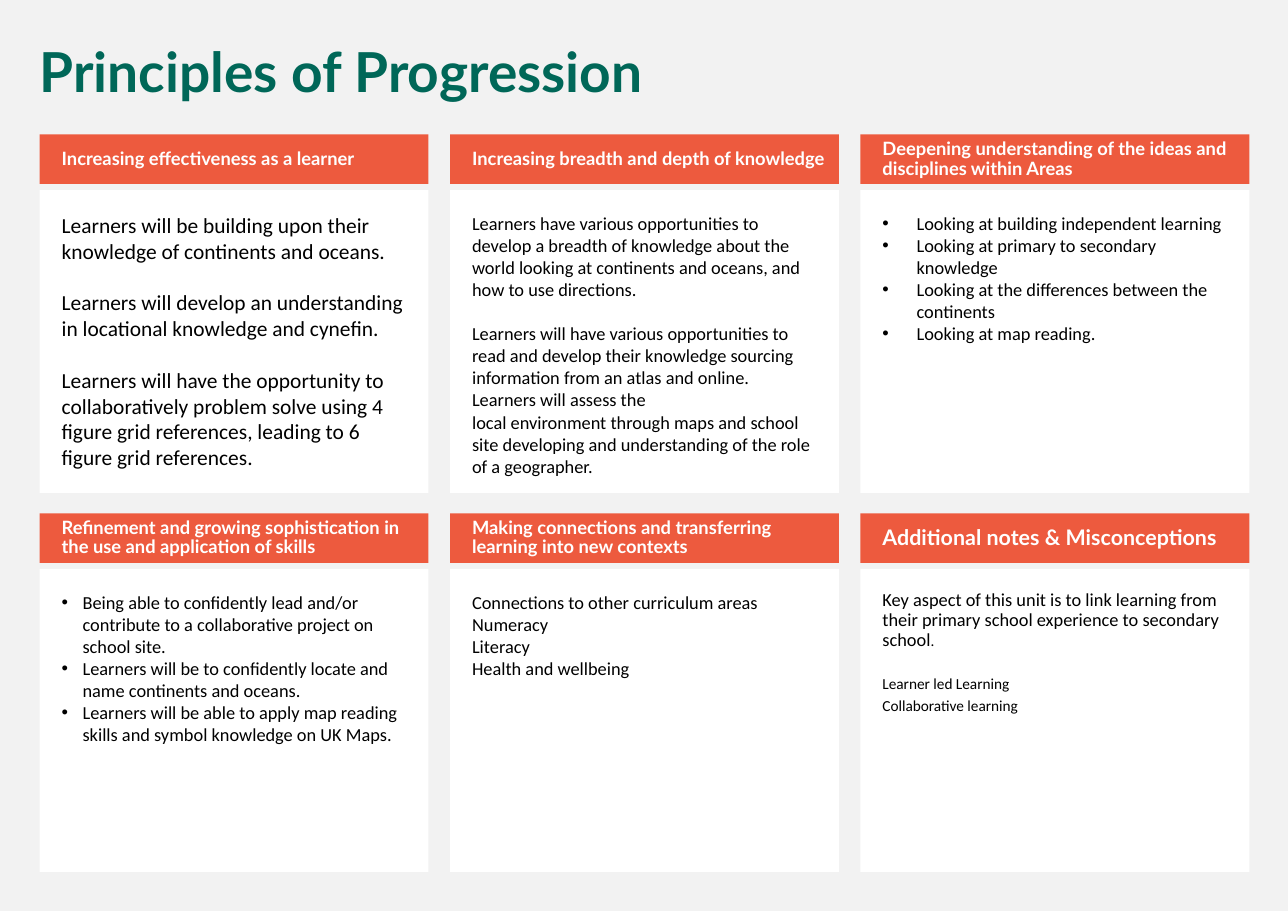
import dataclasses

import pptx
import pptx.dml.color
import pptx.enum.shapes
import pptx.enum.text
import pptx.oxml.xmlchemy
import pptx.util
from lxml import etree
from pptx.oxml.ns import qn

WIDTH, HEIGHT = 11.69, 8.27
COLOURS = {"page": "F2F2F2", "title": "006758", "header": "ED5A3E",
           "card": "FFFFFF", "light": "FFFFFF", "dark": "000000"}
COLUMNS, LEFT, TOP = 3, 0.36, 1.22
COLUMN_STEP, ROW_STEP = 3.725, 3.44
CARD_WIDTH, HEADER_HEIGHT, BODY_OFFSET, BODY_HEIGHT = 3.53, 0.45, 0.505, 2.75
HARD_SPACE = chr(160)


@dataclasses.dataclass
class Para:
    """Spans are (text, size) pairs; gap is the space above in points."""
    spans: list
    gap: float = 0
    line: float = 1.0
    bullet: float = 0


@dataclasses.dataclass
class Card:
    header: str
    paras: list
    header_size: int = 12


def plain(size, *texts, gaps=(), gap=0, bullet=0):
    """Paragraphs of one size; those numbered in gaps get space above."""
    return [Para([(text, size)], gap if number in gaps else 0, bullet=bullet)
            for number, text in enumerate(texts)]


CARDS = [
    Card("Increasing effectiveness as a learner", plain(
        14,
        "Learners will be building upon their knowledge of continents and oceans.",
        "Learners will develop an understanding in locational knowledge and cynefin.",
        "Learners will have the opportunity to collaboratively problem solve using "
        "4 figure grid references, leading to 6 figure grid references.",
        gaps=(1, 2), gap=17)),
    Card("Increasing breadth and depth of knowledge", plain(
        12,
        "Learners have various opportunities to develop a breadth of knowledge about "
        "the world looking at continents and oceans, and how to use directions.",
        "Learners will have various opportunities to read and develop their knowledge "
        "sourcing information from an atlas and online.",
        "Learners will assess the " + HARD_SPACE.join(["local", "environment", "through"])
        + " maps and school site developing and understanding of the role of a geographer.",
        gaps=(1,), gap=14.6)),
    Card("Deepening understanding of the ideas and disciplines within Areas", plain(
        12,
        "Looking at building independent learning",
        "Looking at primary to secondary knowledge",
        "Looking at the differences between the continents",
        "Looking at map reading.",
        bullet=0.31)),
    Card("Refinement and growing sophistication in the use and application of skills", plain(
        12,
        "Being able to confidently lead and/or contribute to a collaborative project "
        "on school site.",
        "Learners will be to confidently locate and name continents and oceans.",
        "Learners will be able to apply map reading skills and symbol knowledge on UK Maps.",
        bullet=0.19)),
    Card("Making connections and transferring learning into new contexts", plain(
        12, "Connections to other curriculum areas", "Numeracy", "Literacy",
        "Health and wellbeing")),
    Card("Additional notes & Misconceptions", [
        Para([("Key aspect of this unit is to link learning from their primary school "
               "experience to secondary school", 12), (".", 10)], line=0.9),
        Para([("Learner led Learning", 10)], gap=14, line=1.15),
        Para([("Collaborative learning", 10)], line=1.15)], header_size=14),
]


def colour(name):
    return pptx.dml.color.RGBColor.from_string(COLOURS[name])


def set_all(target, values):
    for name, value in values.items():
        setattr(target, name, value)


def place(shape, box):
    lengths = map(pptx.util.Inches, box)
    set_all(shape, dict(zip(("left", "top", "width", "height"), lengths)))


def add_bullet(para, indent):
    properties = para._p.get_or_add_pPr()
    properties.set("marL", str(pptx.util.Inches(indent)))
    properties.set("indent", str(-pptx.util.Inches(indent)))
    etree.SubElement(properties, qn("a:buFont")).set("typeface", "Arial")
    etree.SubElement(properties, qn("a:buChar")).set("char", "•")


def write(frame, paras, font, anchor, insets):
    sides = ("margin_left", "margin_top", "margin_right", "margin_bottom")
    set_all(frame, {"word_wrap": True, "vertical_anchor": anchor,
                    "auto_size": pptx.enum.text.MSO_AUTO_SIZE.NONE,
                    **dict(zip(sides, map(pptx.util.Inches, insets)))})
    for number, content in enumerate(paras):
        para = frame.add_paragraph() if number else frame.paragraphs[0]
        set_all(para, {"alignment": pptx.enum.text.PP_ALIGN.LEFT,
                       "line_spacing": content.line,
                       "space_before": pptx.util.Pt(content.gap)})
        if content.bullet:
            add_bullet(para, content.bullet)
        for text, size in content.spans:
            span = para.add_run()
            span.text = text
            set_all(span.font, {"name": font["name"], "bold": font["bold"],
                                "size": pptx.util.Pt(size)})
            span.font.color.rgb = colour(font["colour"])


def add_panel(page, box, fill):
    panel = page.shapes.add_shape(pptx.enum.shapes.MSO_SHAPE.RECTANGLE,
                                  *map(pptx.util.Inches, box))
    panel.shadow.inherit = False
    panel.fill.solid()
    panel.fill.fore_color.rgb = colour(fill)
    panel.line.fill.background()
    return panel.text_frame


def add_card(page, card, left, top):
    anchors = pptx.enum.text.MSO_ANCHOR
    body = add_panel(page, (left, top + BODY_OFFSET, CARD_WIDTH, BODY_HEIGHT), "card")
    write(body, card.paras, {"name": "Calibri", "bold": False, "colour": "dark"},
          anchors.TOP, (0.2, 0.2, 0.2, 0.2))
    header = add_panel(page, (left, top, CARD_WIDTH, HEADER_HEIGHT), "header")
    write(header, [Para([(card.header, card.header_size)], line=0.9)],
          {"name": "Lato", "bold": True, "colour": "light"},
          anchors.MIDDLE, (0.2, 0.05, 0.1, 0.05))


def add_title(page, text, box):
    title = page.shapes.title
    place(title, box)
    write(title.text_frame, [Para([(text, 36)], line=0.9)],
          {"name": "Lato", "bold": True, "colour": "title"},
          pptx.enum.text.MSO_ANCHOR.TOP, (0.1, 0.05, 0.1, 0.05))


def main():
    deck = pptx.Presentation()
    set_all(deck, {"slide_width": pptx.util.Inches(WIDTH),
                   "slide_height": pptx.util.Inches(HEIGHT)})
    page = deck.slides.add_slide(deck.slide_layouts.get_by_name("Title Only"))
    page.background.fill.solid()
    page.background.fill.fore_color.rgb = colour("page")
    add_title(page, "Principles of Progression", (0.26, 0.36, 11.08, 0.65))
    for number, card in enumerate(CARDS):
        row, column = divmod(number, COLUMNS)
        add_card(page, card, LEFT + column * COLUMN_STEP, TOP + row * ROW_STEP)
    deck.save("out.pptx")


if __name__ == "__main__":
    main()
